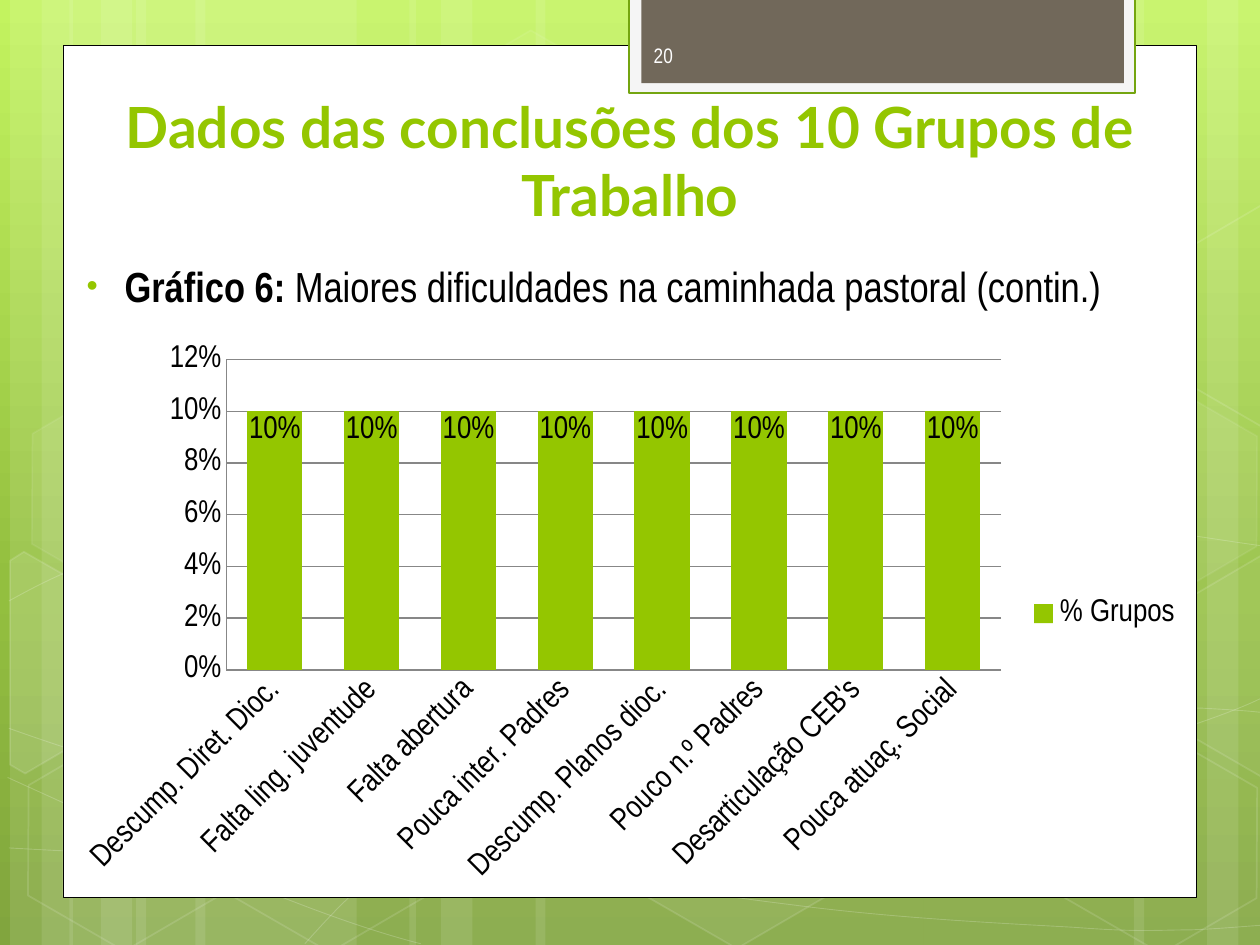
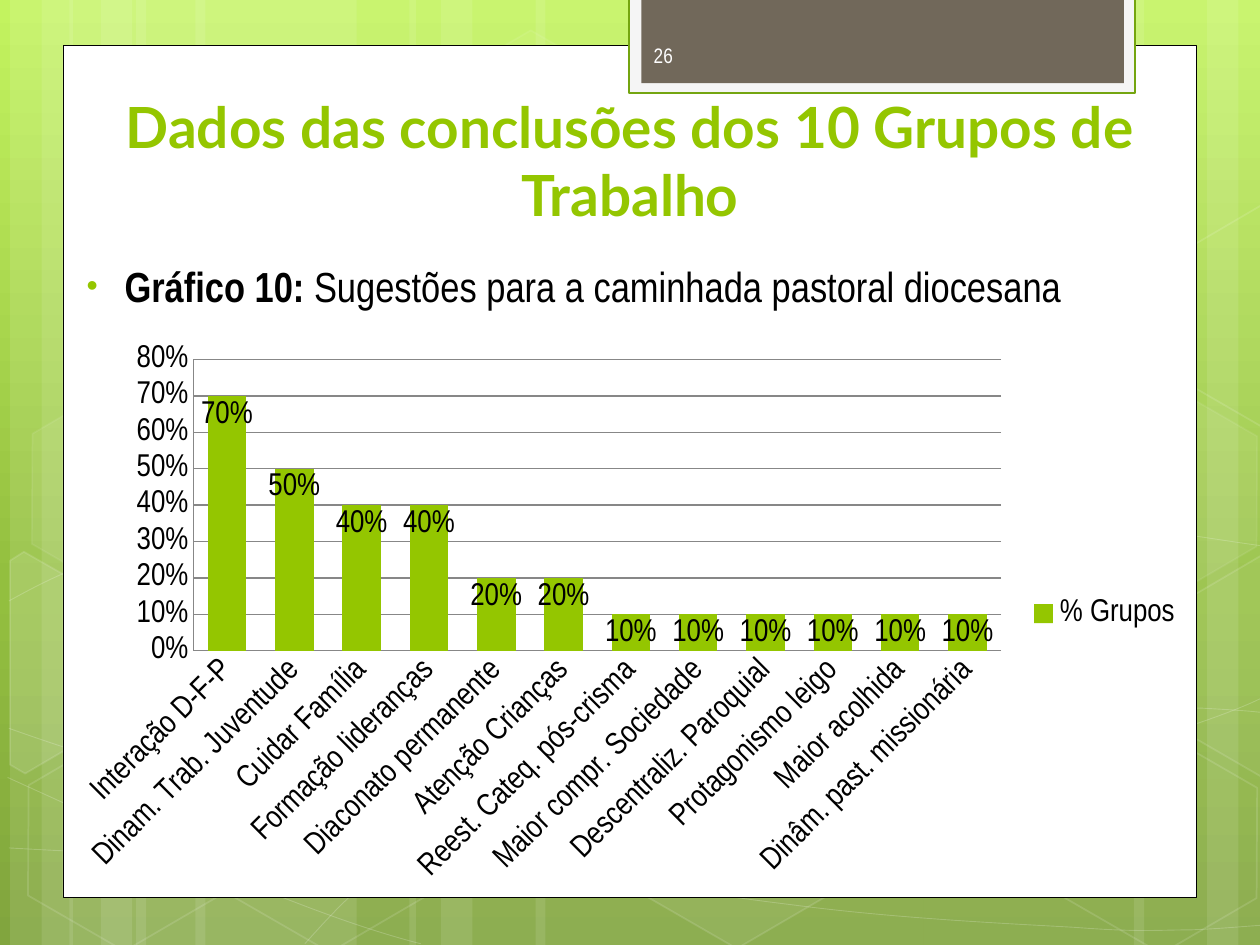
from copy import deepcopy
from typing import NamedTuple

from lxml.etree import SubElement
from pptx import Presentation
from pptx.chart.data import CategoryChartData
from pptx.dml.color import RGBColor
from pptx.enum.chart import XL_CHART_TYPE, XL_LABEL_POSITION, XL_LEGEND_POSITION, XL_TICK_MARK
from pptx.enum.shapes import MSO_SHAPE
from pptx.enum.text import MSO_ANCHOR, MSO_AUTO_SIZE, PP_ALIGN
from pptx.oxml.ns import qn
from pptx.util import Pt

PX = 9144
LIME = RGBColor(0x94, 0xC6, 0x00)
DARK_LIME = RGBColor(0x74, 0xA5, 0x10)
WHITE = RGBColor(0xFF, 0xFF, 0xFF)
OFF_WHITE = RGBColor(0xFE, 0xFE, 0xFE)
PALE_GREY = RGBColor(0xF5, 0xF5, 0xF5)
GRID_GREY = RGBColor(0x87, 0x87, 0x87)
BROWN = RGBColor(0x71, 0x68, 0x5A)
BLACK = RGBColor(0x00, 0x00, 0x00)
GRADIENT = [
    (0, RGBColor(0xC3, 0xF3, 0x5F)),
    (0.62, RGBColor(0x93, 0xBF, 0x3F)),
    (1, RGBColor(0x81, 0xA5, 0x3E)),
]
BODY_FONT = "Arial Narrow"
TITLE_FONT = "Lato"
TITLE = "Dados das conclusões dos 10 Grupos de Trabalho"

STRIPES = [
    (108, 175), (8, 50), (33, 83), (155, 175), (55, 50), (80, 83),
    (733, 175), (958, 50), (900, 83), (425, 308), (325, 50), (350, 83),
]
CURVES = [
    [(7, 673), (61, 676), (115, 679), (190, 678), (265, 677), (358, 675), (458, 665),
     (558, 655), (700, 636), (792, 617), (883, 598), (977, 568), (1007, 551)],
    [(7, 477), (36, 461), (65, 446), (121, 431), (178, 416), (259, 394), (347, 387),
     (436, 380), (544, 379), (654, 387), (764, 395), (947, 426), (1007, 434)],
    [(6, 617), (127, 672), (247, 727), (334, 749)],
    [(7, 578), (38, 589), (70, 600), (128, 616), (186, 631), (273, 656), (357, 673),
     (440, 690), (545, 708), (628, 718), (711, 729), (800, 733), (853, 736),
     (905, 740), (919, 738), (945, 738), (971, 737), (989, 735), (1007, 734)],
    [(242, 749), (260, 729), (278, 709), (302, 691), (326, 673), (360, 653), (388, 639),
     (416, 625), (433, 619), (470, 609), (506, 599), (573, 585), (608, 578),
     (644, 571), (649, 571), (680, 569), (711, 566), (760, 563), (794, 562),
     (829, 561), (886, 562), (886, 562), (886, 562), (953, 562), (953, 562),
     (971, 563), (988, 564), (997, 565), (1006, 566), (1003, 565), (1006, 566)],
]
HEXAGONS = [
    (334, 36, 4, 8), (497, 589, 6, 12), (11, 591, 0, 12), (14, 312, 7, 8),
    (174, 592, 0, 12), (753, 453, 10, 12), (834, 593, 0, 12), (834, 314, 7, 8),
]
CUT_HEXAGONS = [
    ([(8, 445), (19, 438), (96, 482), (95, 570), (20, 614), (8, 607)], 10),
    ([(926, 485), (1001, 441), (1009, 446), (1009, 613), (1002, 617), (926, 573)], 4),
    ([(926, 207), (1001, 163), (1010, 168), (1009, 335), (1002, 339), (926, 295)], 0),
]


class Box(NamedTuple):
    """A rectangle in px."""

    left: int
    top: int
    width: int
    height: int

    def inner(self, left, top, width, height):
        """Return a box placed relative to this one."""
        return Box(self.left + left, self.top + top, width, height)

    def emu(self):
        """Return the four lengths in EMU."""
        return [length * PX for length in self]


SLIDE_BOX = Box(0, 0, 1000, 750)
PANEL_BOX = Box(50, 36, 900, 676)


def add_alpha(element, percent):
    """Make the first colour in the element partly transparent."""
    color = next(element.iter(qn("a:srgbClr")))
    SubElement(color, qn("a:alpha"), val=str(percent * 1000))


def paint(shape, fill=None, fill_alpha=100, line=None, line_width=1, line_alpha=100):
    """Set the fill and outline of a shape."""
    shape.shadow.inherit = False
    properties = shape._element.spPr
    if fill is None or fill_alpha == 0:
        shape.fill.background()
    else:
        shape.fill.solid()
        shape.fill.fore_color.rgb = fill
        add_alpha(properties, fill_alpha)
    if line is None:
        shape.line.fill.background()
    else:
        shape.line.color.rgb = line
        shape.line.width = Pt(line_width)
        add_alpha(properties.find(qn("a:ln")), line_alpha)


def add_rectangle(shapes, box, **paint_options):
    """Add a painted rectangle."""
    paint(shapes.add_shape(MSO_SHAPE.RECTANGLE, *box.emu()), **paint_options)


def add_outline(shapes, box, points, close, **paint_options):
    """Add a painted freeform through points relative to the box and return it."""
    placed = [(box.left + x, box.top + y) for x, y in points]
    builder = shapes.build_freeform(*placed[0], scale=PX)
    builder.add_line_segments(placed[1:], close=close)
    outline = builder.convert_to_shape()
    paint(outline, **paint_options)
    return outline


def bend(outline):
    """Turn each three line segments of a freeform into one cubic Bézier."""
    segments = list(outline._element.iter(qn("a:lnTo")))
    geometry = segments[0].getparent()
    for first in range(0, len(segments), 3):
        curve = SubElement(geometry, qn("a:cubicBezTo"))
        for segment in segments[first:first + 3]:
            curve.append(segment[0])
            geometry.remove(segment)


def write_text(text_frame, runs, font=BODY_FONT, size=24, color=BLACK,
               align=PP_ALIGN.LEFT, anchor=MSO_ANCHOR.TOP, space=0):
    """Fill a text frame with one paragraph of (text, bold) runs and return it."""
    text_frame.word_wrap = True
    text_frame.auto_size = MSO_AUTO_SIZE.NONE
    text_frame.vertical_anchor = anchor
    paragraph = text_frame.paragraphs[0]
    paragraph.alignment = align
    paragraph.space_before = paragraph.space_after = Pt(space)
    for text, bold in runs:
        run = paragraph.add_run()
        run.text = text
        run.font.name = font
        run.font.size = Pt(size)
        run.font.bold = bold
        run.font.color.rgb = color
    return paragraph


def add_bullet(paragraph, color, size_percent, margin, indent):
    """Give a paragraph a round bullet with a hanging indent."""
    properties = paragraph._p.get_or_add_pPr()
    properties.set("marL", str(margin * PX))
    properties.set("indent", str(indent * PX))
    bullet_color = SubElement(properties, qn("a:buClr"))
    SubElement(bullet_color, qn("a:srgbClr"), val=str(color))
    SubElement(properties, qn("a:buSzPct"), val=str(size_percent * 1000))
    SubElement(properties, qn("a:buFont"), typeface="Arial")
    SubElement(properties, qn("a:buChar"), char="•")


def draw_background(layout):
    """Fill the layout background with the vertical green gradient."""
    fill = layout.background.fill
    fill.gradient()
    fill.gradient_angle = 270
    last_stop = next(layout._element.iter(qn("a:gsLst")))[-1]
    last_stop.addnext(deepcopy(last_stop))
    for stop, (position, color) in zip(fill.gradient_stops, GRADIENT):
        stop.position = position
        stop.color.rgb = color


def draw_backdrop(shapes, box):
    """Draw the translucent stripes, curves and hexagons."""
    for left, width in STRIPES:
        add_rectangle(shapes, box.inner(left, 0, width, box.height), fill=WHITE, fill_alpha=10)
    for knots in CURVES:
        bend(add_outline(shapes, box, knots, False, line=WHITE, line_width=0.5, line_alpha=20))
    for left, top, fill_alpha, line_alpha in HEXAGONS:
        hexagon = shapes.add_shape(MSO_SHAPE.HEXAGON, *box.inner(left, top, 175, 152).emu())
        hexagon.adjustments[0] = 0.285
        hexagon.rotation = 30
        paint(hexagon, WHITE, fill_alpha, WHITE, line_alpha=line_alpha)
    for points, fill_alpha in CUT_HEXAGONS:
        add_outline(shapes, box, points, True, fill=WHITE, fill_alpha=fill_alpha,
                    line=WHITE, line_alpha=12)


def draw_panel(shapes, box):
    """Draw the white panel and the tab at its top."""
    add_rectangle(shapes, box, fill=WHITE, line=BLACK, line_width=0.5)
    add_rectangle(shapes, box.inner(449, -38, 402, 76),
                  fill=PALE_GREY, line=DARK_LIME, line_width=1.25)
    add_rectangle(shapes, box.inner(459, -38, 383, 68), fill=BROWN)


def style_layout(layout, slide):
    """Draw the shared parts through the slide and move them to its layout."""
    for placeholder in list(layout.placeholders)[1:]:
        layout.shapes._spTree.remove(placeholder._element)
    draw_background(layout)
    draw_backdrop(slide.shapes.add_group_shape().shapes, SLIDE_BOX)
    draw_panel(slide.shapes, PANEL_BOX)
    for shape in list(slide.shapes):
        if not shape.is_placeholder:
            layout.shapes._spTree.append(shape._element)


def place_number(slide, box, number):
    """Write the slide number on the tab."""
    number_box = slide.shapes.add_textbox(*box.emu())
    write_text(number_box.text_frame, [(str(number), False)], size=12,
               color=OFF_WHITE, anchor=MSO_ANCHOR.MIDDLE)


def place_title(slide, box):
    """Place and format the title in front of the other parts."""
    title = slide.shapes.title
    title.left, title.top, title.width, title.height = box.emu()
    write_text(title.text_frame, [(TITLE, True)], font=TITLE_FONT, size=32.4,
               color=LIME, align=PP_ALIGN.CENTER, anchor=MSO_ANCHOR.BOTTOM)
    slide.shapes._spTree.append(title._element)


def draw_caption(slide, box, label, caption):
    """Add the bulleted caption above the chart."""
    text_box = slide.shapes.add_textbox(*box.emu())
    paragraph = write_text(text_box.text_frame, [(label, True), (" " + caption, False)], space=12)
    add_bullet(paragraph, LIME, 76, margin=38, indent=-30)


def draw_chart(slide, box, shares, maximum, unit):
    """Add the column chart of group shares."""
    data = CategoryChartData(number_format="0%")
    data.categories = list(shares)
    data.add_series("% Grupos", list(shares.values()))
    chart = slide.shapes.add_chart(XL_CHART_TYPE.COLUMN_CLUSTERED, *box.emu(), data).chart
    chart.has_title = False
    chart.font.name = BODY_FONT
    chart.font.size = Pt(18)
    chart.font.color.rgb = BLACK
    chart.has_legend = True
    chart.legend.position = XL_LEGEND_POSITION.RIGHT
    chart.legend.include_in_layout = False

    for axis in (chart.category_axis, chart.value_axis):
        axis.major_tick_mark = axis.minor_tick_mark = XL_TICK_MARK.NONE
        axis.format.line.color.rgb = GRID_GREY
        axis.tick_labels.font.size = Pt(18)
    chart.category_axis._element.txPr.bodyPr.set("rot", "-2700000")
    value_axis = chart.value_axis
    value_axis.minimum_scale, value_axis.maximum_scale = 0, maximum
    value_axis.major_unit = unit
    value_axis.major_gridlines.format.line.color.rgb = GRID_GREY
    value_axis.tick_labels.number_format = "0%"
    value_axis.tick_labels.number_format_is_linked = False

    plot = chart.plots[0]
    plot.gap_width, plot.overlap = 75, 40
    plot.vary_by_categories = False
    plot.series[0].format.fill.solid()
    plot.series[0].format.fill.fore_color.rgb = LIME
    plot.has_data_labels = True
    labels = plot.data_labels
    labels.show_value = True
    labels.position = XL_LABEL_POSITION.INSIDE_END
    labels.number_format = "0%"
    labels.number_format_is_linked = False


def fill_slide(slide, number, label, caption, shares, maximum, unit):
    """Fill one slide with a caption, a column chart, a number and a title."""
    draw_caption(slide, PANEL_BOX.inner(1, 166, 898, 512), label, caption)
    draw_chart(slide, PANEL_BOX.inner(1, 229, 898, 444), shares, maximum, unit)
    place_number(slide, PANEL_BOX.inner(459, -12, 146, 40), number)
    place_title(slide, PANEL_BOX.inner(1, 25, 898, 125))


def main():
    """Build and save the presentation."""
    presentation = Presentation()
    presentation.slide_width = SLIDE_BOX.width * PX
    presentation.slide_height = SLIDE_BOX.height * PX
    layout = presentation.slide_layouts[5]
    difficulties = dict.fromkeys([
        "Descump. Diret. Dioc.", "Falta ling. juventude", "Falta abertura",
        "Pouca inter. Padres", "Descump. Planos dioc.", "Pouco n.º Padres",
        "Desarticulação CEB's", "Pouca atuaç. Social"], 0.1)
    suggestions = {
        "Interação D-F-P": 0.7, "Dinam. Trab. Juventude": 0.5, "Cuidar Família": 0.4,
        "Formação lideranças": 0.4, "Diaconato permanente": 0.2, "Atenção Crianças": 0.2,
        "Reest. Cateq. pós-crisma": 0.1, "Maior compr. Sociedade": 0.1,
        "Descentraliz. Paroquial": 0.1, "Protagonismo leigo": 0.1,
        "Maior acolhida": 0.1, "Dinâm. past. missionária": 0.1}
    first, second = [presentation.slides.add_slide(layout) for _ in range(2)]
    style_layout(layout, first)
    fill_slide(first, 20, "Gráfico 6:", "Maiores dificuldades na caminhada pastoral (contin.)",
               difficulties, 0.12, 0.02)
    fill_slide(second, 26, "Gráfico 10:", "Sugestões para a caminhada pastoral diocesana",
               suggestions, 0.8, 0.1)
    presentation.save("out.pptx")


if __name__ == "__main__":
    main()
